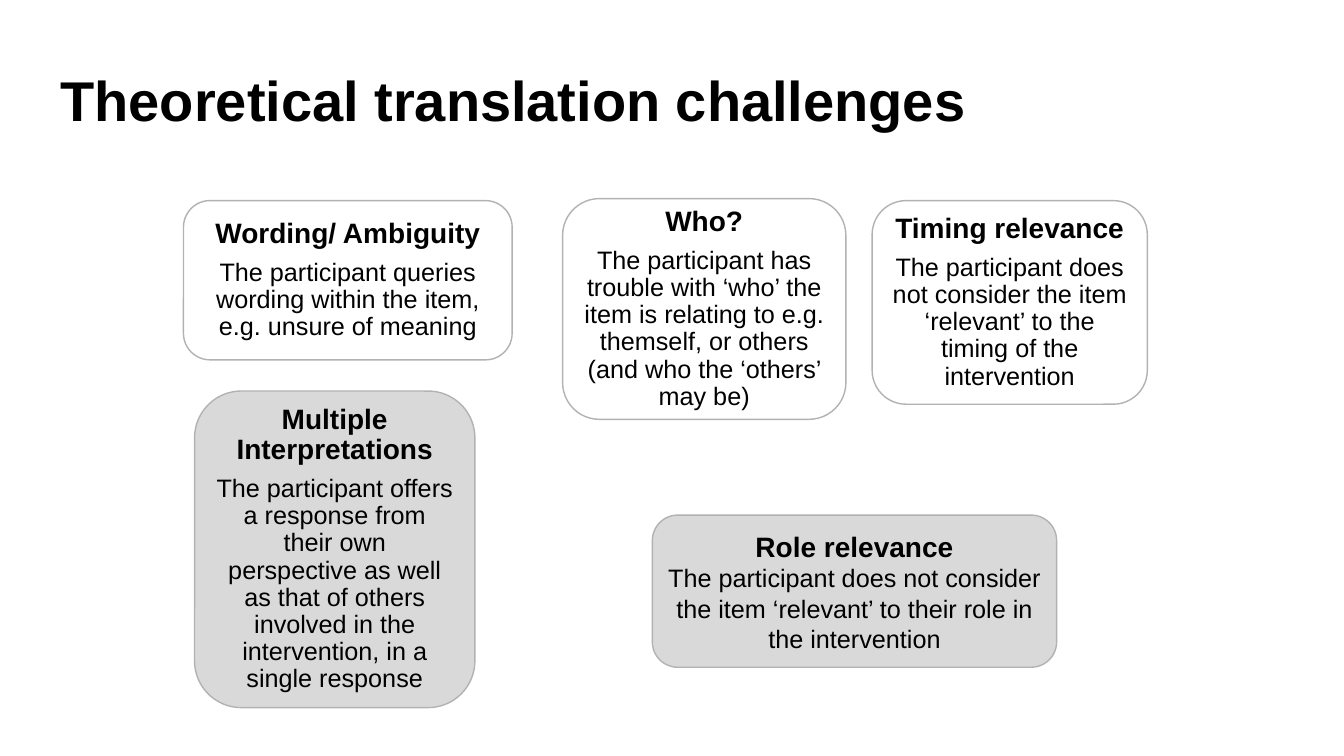
from pptx import Presentation
from pptx.dml.color import RGBColor
from pptx.enum.shapes import MSO_SHAPE
from pptx.enum.text import MSO_ANCHOR, PP_ALIGN
from pptx.util import Pt

EMU_PER_PX = 9144  # 100 px to the inch
FONT = "Arial"
INSET = 8
COLORS = {"text": "000000", "border": "B2B2B2", "white": "FFFFFF", "grey": "D9D9D9"}

# left, top, width, height, fill, line spacing, space after heading, heading, body
CARDS = [
    (182, 199, 326, 158, "white", 0.9, 7, "Wording/ Ambiguity",
     "The participant queries wording within the item, e.g. unsure of meaning"),
    (865, 199, 273, 202, "white", 0.9, 7, "Timing relevance",
     "The participant does not consider the item ‘relevant’ to the timing of the intervention"),
    (647, 511, 401, 151, "grey", 1.0, 0, "Role relevance",
     "The participant does not consider the item ‘relevant’ to their role in the intervention"),
    (558, 197, 281, 219, "white", 0.9, 7, "Who?",
     "The participant has trouble with ‘who’ the item is relating to e.g. themself, "
     "or others (and who the ‘others’ may be)"),
    (193, 388, 278, 314, "grey", 0.9, 7, "Multiple Interpretations",
     "The participant offers a response from their own perspective as well as that of "
     "others involved in the intervention, in a single response"),
]


def px(length):
    return length * EMU_PER_PX


def color(name):
    return RGBColor.from_string(COLORS[name])


def format_paragraph(paragraph, size, bold, align, line_spacing):
    paragraph.alignment = align
    paragraph.line_spacing = line_spacing
    paragraph.font.name = FONT
    paragraph.font.size = Pt(size)
    paragraph.font.bold = bold
    paragraph.font.color.rgb = color("text")


def set_title(slide, text):
    title = slide.shapes.title
    title.left, title.top, title.width, title.height = px(50), px(40), px(1015), px(125)
    title.text_frame.text = text
    title.text_frame.vertical_anchor = MSO_ANCHOR.MIDDLE
    format_paragraph(title.text_frame.paragraphs[0], 40, True, PP_ALIGN.LEFT, 0.9)


def add_card(slide, left, top, width, height, fill, line_spacing, gap, heading, body):
    card = slide.shapes.add_shape(
        MSO_SHAPE.ROUNDED_RECTANGLE, px(left), px(top), px(width), px(height))
    card.shadow.inherit = False
    card.fill.solid()
    card.fill.fore_color.rgb = color(fill)
    card.line.color.rgb = color("border")
    card.line.width = Pt(1)

    frame = card.text_frame
    frame.word_wrap = True
    frame.vertical_anchor = MSO_ANCHOR.MIDDLE
    frame.margin_left = frame.margin_right = px(INSET)
    frame.margin_top = frame.margin_bottom = px(INSET)
    frame.text = f"{heading}\n{body}"
    heading_paragraph, body_paragraph = frame.paragraphs
    format_paragraph(heading_paragraph, 20, True, PP_ALIGN.CENTER, line_spacing)
    heading_paragraph.space_after = Pt(gap)
    format_paragraph(body_paragraph, 18, False, PP_ALIGN.CENTER, line_spacing)


def main():
    presentation = Presentation()
    presentation.slide_width = px(1333)
    presentation.slide_height = px(750)
    slide = presentation.slides.add_slide(presentation.slide_layouts.get_by_name("Title Only"))
    set_title(slide, "Theoretical translation challenges")
    for card in CARDS:
        add_card(slide, *card)
    presentation.save("out.pptx")


if __name__ == "__main__":
    main()
